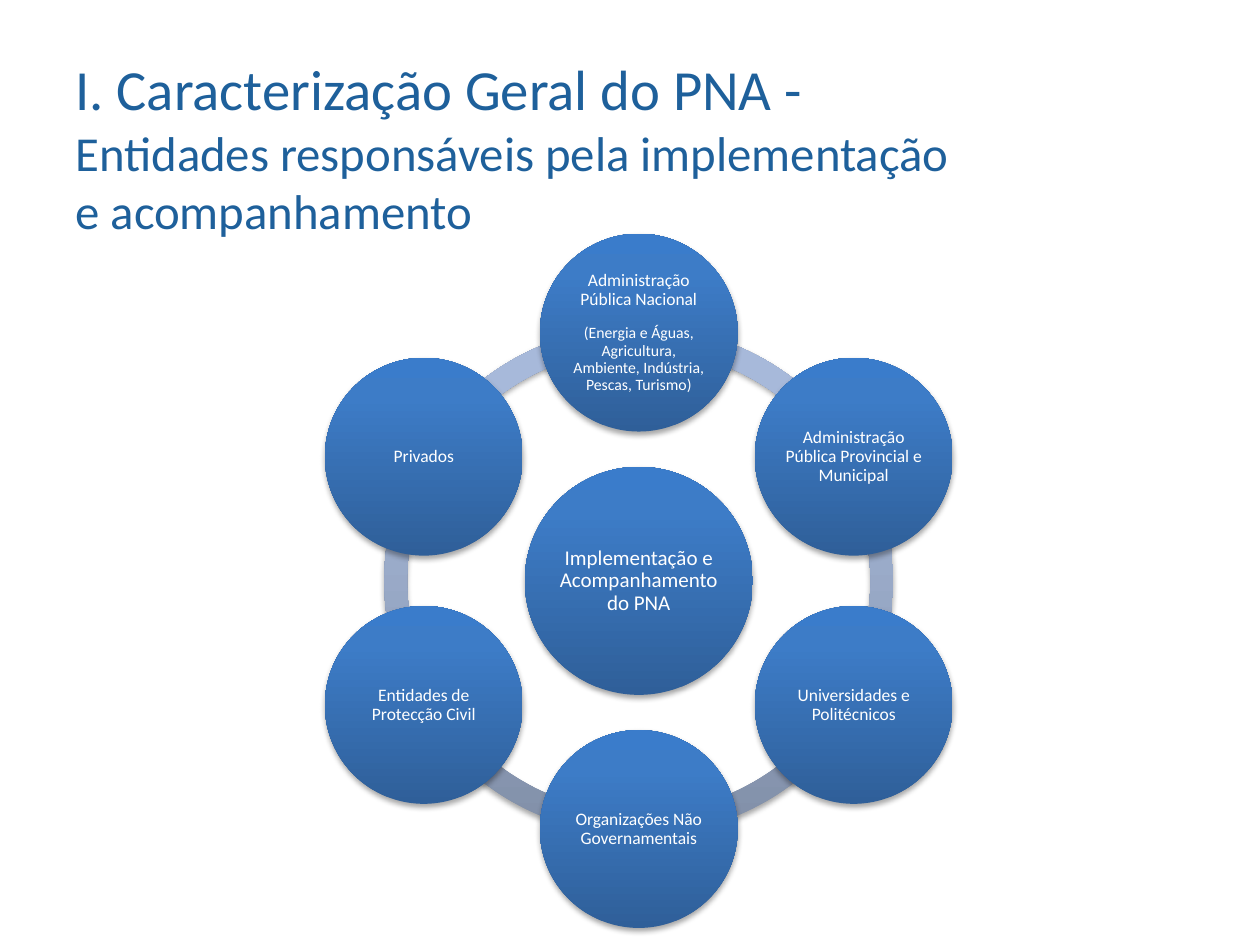
import math
import pptx
import pptx.dml.color
import pptx.enum.shapes
import pptx.enum.text
import pptx.oxml
import pptx.oxml.ns
import pptx.util

Inches, Pt = pptx.util.Inches, pptx.util.Pt
Kind = pptx.enum.shapes.MSO_SHAPE
Align = pptx.enum.text.PP_ALIGN
Anchor = pptx.enum.text.MSO_ANCHOR

# Content
TITLE = [
    ("I. Caracterização Geral do PNA -", "head"),
    ("Entidades responsáveis pela implementação e acompanhamento", "sub"),
]
HUB = [("Implementação e Acompanhamento do PNA", "hub")]
NODES = [  # clockwise from the top
    [("Administração Pública Nacional", "node"),
     ("(Energia e Águas, Agricultura, Ambiente, Indústria, Pescas, Turismo)", "note")],
    [("Administração Pública Provincial e Municipal", "node")],
    [("Universidades e Politécnicos", "node")],
    [("Organizações Não Governamentais", "node")],
    [("Entidades de Protecção Civil", "node")],
    [("Privados", "node")],
]

THEME = {
    "font": "Calibri",
    "title": "1E609B",
    "text": "FFFFFF",
    "disc": [(0, "2F5F99"), (80, "3D7CC7"), (100, "3A7CCB")],
    "ring": [(0, "818FA8"), (80, "A7B9DA"), (100, "A7BADC")],
    "size": {"head": 32.4, "sub": 27.9, "hub": 12, "node": 10, "note": 9},
}

# Wheel geometry, in inches
MID_X, MID_Y = 5.07, 4.61
ORBIT = 1.97
RING, HUB_SIZE, NODE_SIZE = 4.04, 1.81, 1.57
BAND = 0.045
STEP = 360 / len(NODES)


def style(run, role, color):
    run.font.name = THEME["font"]
    run.font.size = Pt(THEME["size"][role])
    run.font.color.rgb = pptx.dml.color.RGBColor.from_string(color)


def paint(shape, stops):
    """Vertical gradient from the bottom up, with a soft shadow below."""
    marks = "".join(
        f'<a:gs pos="{pos * 1000}"><a:srgbClr val="{color}"/></a:gs>'
        for pos, color in stops)
    space = pptx.oxml.ns.nsdecls("a")
    fill = (f'<a:gradFill {space} rotWithShape="1"><a:gsLst>{marks}</a:gsLst>'
            '<a:lin ang="16200000" scaled="0"/></a:gradFill>')
    glow = (f'<a:effectLst {space}><a:outerShdw blurRad="40000" dist="23000" '
            'dir="5400000" rotWithShape="0"><a:srgbClr val="000000">'
            '<a:alpha val="35000"/></a:srgbClr></a:outerShdw></a:effectLst>')
    shape.line.fill.background()
    props = shape._element.spPr
    props.find(pptx.oxml.ns.qn("a:prstGeom")).addnext(pptx.oxml.parse_xml(fill))
    props.append(pptx.oxml.parse_xml(glow))


def add_round(slide, kind, x, y, size, stops):
    shape = slide.shapes.add_shape(
        kind, Inches(x - size / 2), Inches(y - size / 2),
        Inches(size), Inches(size))
    paint(shape, stops)
    return shape


def add_disc(slide, x, y, size, lines):
    disc = add_round(slide, Kind.OVAL, x, y, size, THEME["disc"])
    frame = disc.text_frame
    frame.word_wrap = True
    frame.vertical_anchor = Anchor.MIDDLE
    frame.margin_left = frame.margin_right = Inches(0.01)
    frame.margin_top = frame.margin_bottom = Inches(0.01)
    frame.text = "\n".join(text for text, role in lines)
    for para, (text, role) in zip(frame.paragraphs, lines):
        para.alignment = Align.CENTER
        para.line_spacing = 0.9
        if role == "note":
            para.space_before = Pt(9)
        style(para.runs[0], role, THEME["text"])


def add_title(slide):
    box = slide.shapes.add_textbox(
        Inches(0.5), Inches(0.54), Inches(7.18), Inches(1.25))
    frame = box.text_frame
    frame.word_wrap = True
    frame.vertical_anchor = Anchor.MIDDLE
    para = frame.paragraphs[0]
    para.text = "\v".join(text for text, role in TITLE)
    for run, (text, role) in zip(para.runs, TITLE):
        style(run, role, THEME["title"])


def main():
    deck = pptx.Presentation()
    deck.slide_width, deck.slide_height = Inches(10), Inches(7.5)
    slide = deck.slides.add_slide(deck.slide_layouts[6])
    add_title(slide)

    # Ring: one arc between each pair of neighbours
    for i in range(len(NODES)):
        arc = add_round(slide, Kind.BLOCK_ARC, MID_X, MID_Y, RING, THEME["ring"])
        start = (i * STEP - 90) % 360
        # Angles are stored in 1/60000 degree, adjustments in 1/100000
        arc.adjustments[0] = start * 0.6
        arc.adjustments[1] = (start + STEP) % 360 * 0.6
        arc.adjustments[2] = BAND

    # Hub and the nodes around it
    add_disc(slide, MID_X, MID_Y, HUB_SIZE, HUB)
    for i, lines in enumerate(NODES):
        turn = math.radians(i * STEP - 90)
        add_disc(slide, MID_X + ORBIT * math.cos(turn),
                 MID_Y + ORBIT * math.sin(turn), NODE_SIZE, lines)

    deck.save("out.pptx")


if __name__ == "__main__":
    main()
